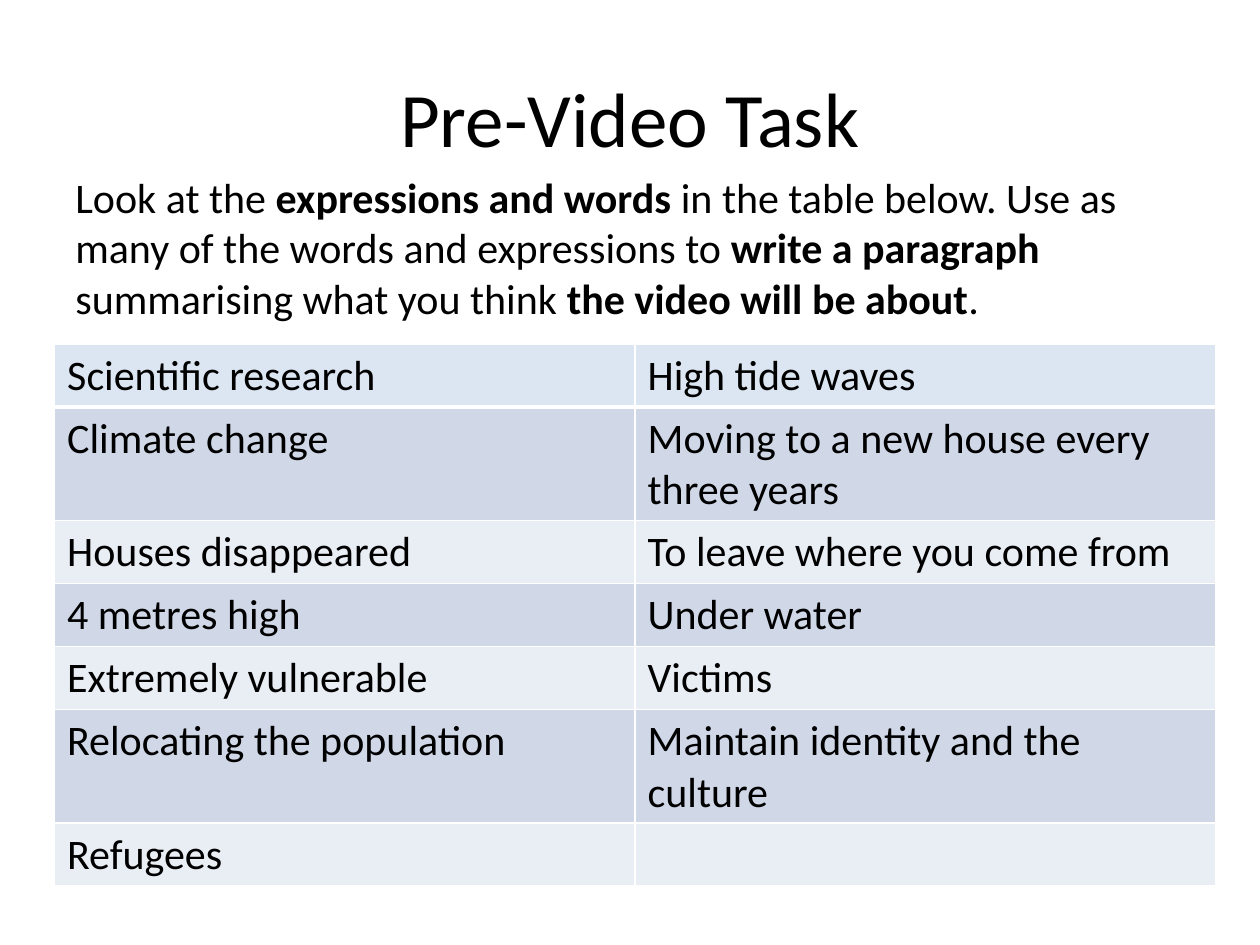
from dataclasses import dataclass

from lxml import etree
from pptx import Presentation
from pptx.dml.color import RGBColor
from pptx.enum.text import MSO_ANCHOR, PP_ALIGN
from pptx.oxml.ns import qn
from pptx.util import Pt

CENTER, LEFT = PP_ALIGN.CENTER, PP_ALIGN.LEFT
TOP, MIDDLE = MSO_ANCHOR.TOP, MSO_ANCHOR.MIDDLE


@dataclass(frozen=True)
class Theme:
    font: str = "Calibri"
    title_size: int = 44
    body_size: int = 24
    text: str = "000000"
    border: str = "FFFFFF"
    header: str = "DCE6F2"
    bands: tuple = ("D0D8E8", "E9EDF4")


class SlideBuilder:
    def __init__(self, slide, theme):
        self.slide = slide
        self.theme = theme

    def style(self, font, size):
        font.name = self.theme.font
        font.size = Pt(size)
        font.color.rgb = RGBColor.from_string(self.theme.text)

    def text(self, box, runs, size, align=LEFT, anchor=TOP):
        """Add one paragraph made of (text, bold) runs."""
        tf = self.slide.shapes.add_textbox(*map(Pt, box)).text_frame
        tf.word_wrap = True
        tf.vertical_anchor = anchor
        p = tf.paragraphs[0]
        p.alignment = align
        self.style(p.font, size)
        for text, bold in runs:
            r = p.add_run()
            r.text = text
            r.font.bold = bold
        return p

    def borders(self, cell, bottom):
        tc_pr = cell._tc.get_or_add_tcPr()
        for side, width in (("L", 1), ("R", 1), ("T", 1), ("B", bottom)):
            ln = etree.SubElement(tc_pr, qn(f"a:ln{side}"), w=str(Pt(width)))
            fill = etree.SubElement(ln, qn("a:solidFill"))
            etree.SubElement(fill, qn("a:srgbClr"), val=self.theme.border)

    def table(self, left, top, width, row_height, rows):
        table = self.slide.shapes.add_table(
            len(rows), len(rows[0]), Pt(left), Pt(top),
            Pt(width), Pt(row_height * len(rows))).table
        for i, row in enumerate(rows):
            color = self.theme.bands[(i - 1) % 2] if i else self.theme.header
            for j, text in enumerate(row):
                cell = table.cell(i, j)
                self.borders(cell, bottom=1 if i else 3)
                cell.fill.solid()
                cell.fill.fore_color.rgb = RGBColor.from_string(color)
                cell.text = text
                p = cell.text_frame.paragraphs[0]
                self.style(p.font, self.theme.body_size)
                p.font.bold = False


def main():
    prs = Presentation()
    prs.slide_width, prs.slide_height = Pt(720), Pt(540)
    theme = Theme()
    s = SlideBuilder(prs.slides.add_slide(prs.slide_layouts[6]), theme)

    # Title
    s.text((36, 21.6, 648, 90), [("Pre-Video Task", False)],
           theme.title_size, CENTER, MIDDLE)

    # Instructions
    p = s.text((36, 94.5, 648, 388), [
        ("Look at the ", False),
        ("expressions and words ", True),
        ("in the table below. Use as many of the words and expressions to ", False),
        ("write a paragraph ", True),
        ("summarising what you think ", False),
        ("the video will be about", True),
        (".", False),
    ], theme.body_size)
    p.space_before = Pt(4.8)

    # Expressions and words
    s.table(31.2, 196.6, 663.4, 29.5, [
        ("Scientific research", "High tide waves"),
        ("Climate change", "Moving to a new house every three years"),
        ("Houses disappeared", "To leave where you come from"),
        ("4 metres high", "Under water"),
        ("Extremely vulnerable", "Victims"),
        ("Relocating the population", "Maintain identity and the culture"),
        ("Refugees", ""),
    ])

    prs.save("out.pptx")


if __name__ == "__main__":
    main()
